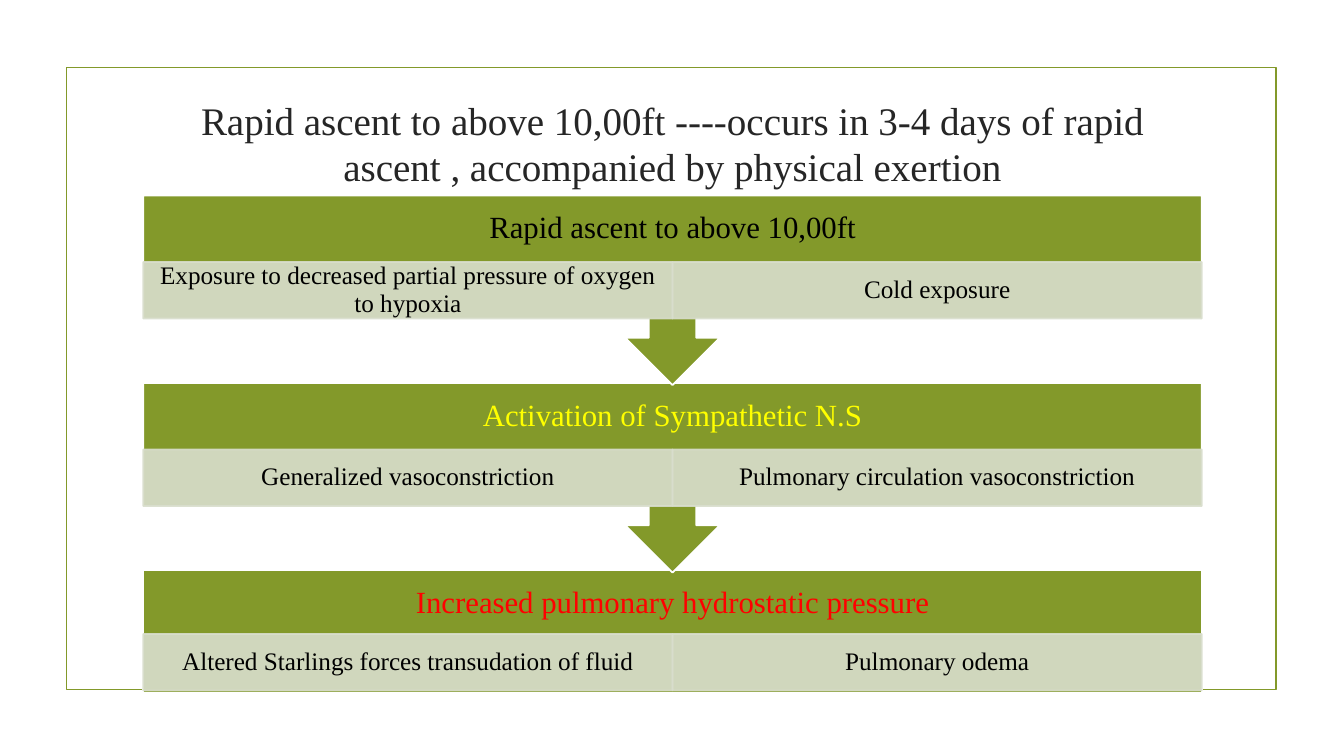
from pptx import Presentation
from pptx.dml.color import RGBColor
from pptx.enum.shapes import MSO_SHAPE as Shape
from pptx.enum.text import MSO_ANCHOR as Anchor, PP_ALIGN as Align
from pptx.oxml.ns import qn
from pptx.util import Inches, Pt
from lxml import etree

HUES = {"green": "83992A", "pale": "D9DECD", "white": "FFFFFF", "ink": "262626",
        "black": "000000", "yellow": "FFFF00", "red": "FF0000"}
FONT = "Times New Roman"
LEFT, TOP, WIDTH = 1.42, 1.94, 10.5
PITCH, CALL, LAST = 1.86, 1.88, 1.21  # step spacing, callout and last box heights
HEAD, CELL = 0.66, 0.56

STEPS = [
    ("Rapid ascent to above 10,00ft", "black",
     ["Exposure to decreased partial pressure of oxygen to hypoxia", "Cold exposure"]),
    ("Activation of Sympathetic N.S", "yellow",
     ["Generalized vasoconstriction", "Pulmonary circulation vasoconstriction"]),
    ("Increased pulmonary hydrostatic pressure", "red",
     ["Altered Starlings forces transudation of fluid", "Pulmonary odema"]),
]


def rgb(name):
    return RGBColor.from_string(HUES[name])


def fade(color, share):
    """Set the opacity, in percent, of every RGB colour below an element."""
    for node in color.iter(qn("a:srgbClr")):
        etree.SubElement(node, qn("a:alpha"), val=str(share * 1000))


def write(shape, text, size, hue, pad, space=1.0):
    frame = shape.text_frame
    frame.word_wrap = True
    frame.vertical_anchor = Anchor.MIDDLE
    frame.margin_left = frame.margin_right = Inches(pad[0])
    frame.margin_top = frame.margin_bottom = Inches(pad[1])
    para = frame.paragraphs[0]
    para.text = text
    para.alignment = Align.CENTER
    para.line_spacing = space
    para.font.name = FONT
    para.font.size = Pt(size)
    para.font.color.rgb = rgb(hue)


def block(slide, kind, box, fill, line):
    shape = slide.shapes.add_shape(kind, *map(Inches, box))
    shape.shadow.inherit = False
    if fill:
        shape.fill.solid()
        shape.fill.fore_color.rgb = rgb(fill)
    else:
        shape.fill.background()
    shape.line.color.rgb = rgb(line)
    shape.line.width = Pt(1.25)
    return shape


def label(slide, box, *style):
    write(slide.shapes.add_textbox(*map(Inches, box)), *style)


def step(slide, box, head, hue, cells, last):
    """Draw a headed box with a row of cells; all but the last point down."""
    left, top, width, high = box
    kind = Shape.RECTANGLE if last else Shape.UP_ARROW_CALLOUT
    body = block(slide, kind, box, "green", "white")
    if not last:
        body.rotation = 180
    label(slide, (left, top, width, HEAD), head, 22, hue, (0.17, 0.17), 0.9)
    row = top + (0.63 if last else HEAD)
    part = width / len(cells)
    for col, text in enumerate(cells):
        cell = block(slide, Shape.RECTANGLE, (left + col * part, row, part, CELL),
                     "pale", "pale")
        fade(cell._element.spPr, 90)
        write(cell, text, 18, "black", (0.14, 0.03), 0.9)


def flow(slide, left, top, width):
    """Stack the steps from the bottom up, so each arrow lies over the next box."""
    for rank, (head, hue, cells) in reversed(list(enumerate(STEPS))):
        last = rank == len(STEPS) - 1
        box = (left, top + rank * PITCH, width, LAST if last else CALL)
        step(slide, box, head, hue, cells, last)


def main():
    deck = Presentation()
    deck.slide_width, deck.slide_height = Inches(13.33), Inches(7.5)
    slide = deck.slides.add_slide(deck.slide_layouts[6])
    block(slide, Shape.RECTANGLE, (0.66, 0.67, 12, 6.17), None, "green")
    label(slide, (LEFT, 1.02, WIDTH, 0.84),
          "Rapid ascent to above 10,00ft ----occurs in 3-4 days of rapid ascent , "
          "accompanied by physical exertion", 27.9, "ink", (0.1, 0), 0.98)
    flow(slide, LEFT, TOP, WIDTH)
    deck.save("out.pptx")


if __name__ == "__main__":
    main()
